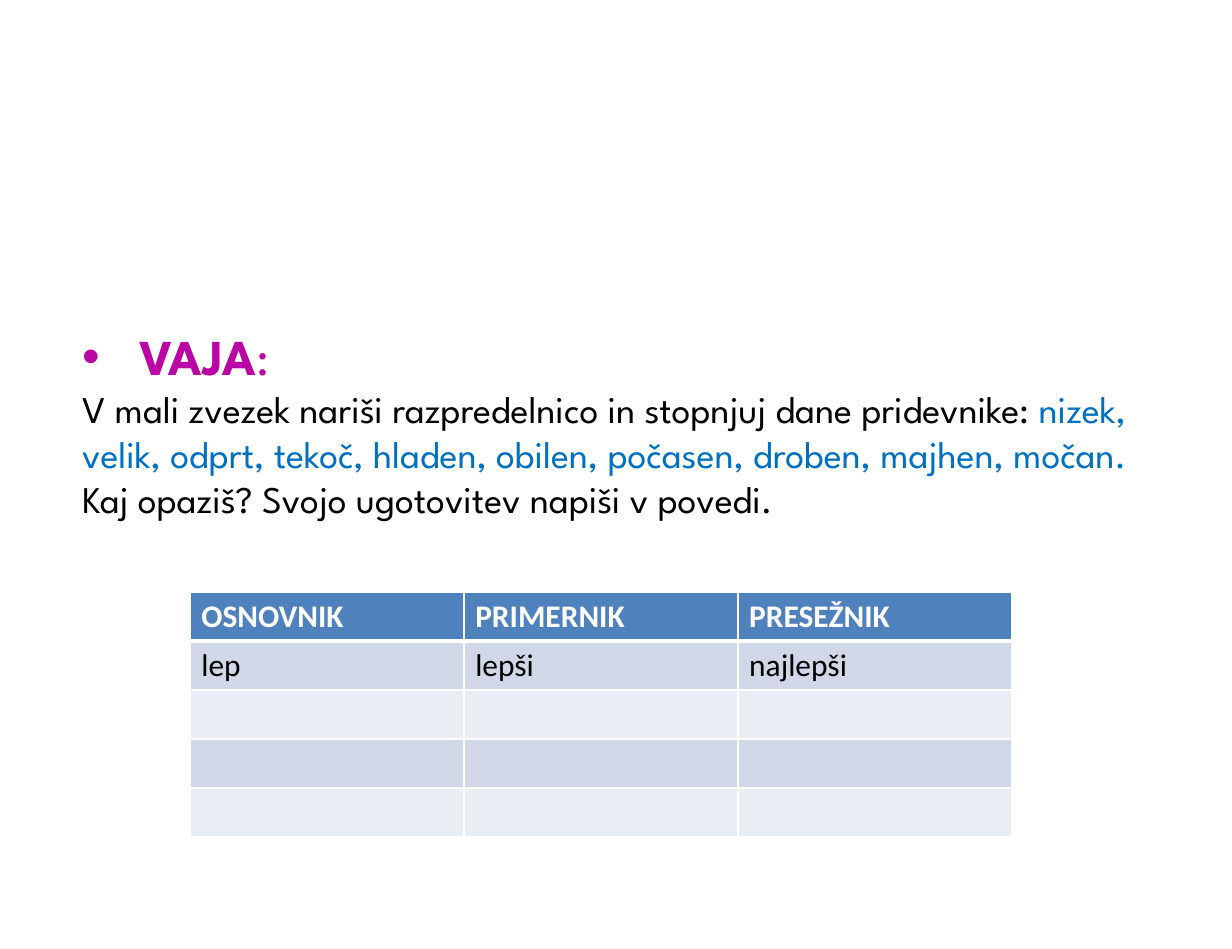
from lxml.etree import SubElement
from pptx import Presentation
from pptx.dml.color import RGBColor
from pptx.oxml.ns import qn
from pptx.util import Emu, Pt

PIXELS_PER_INCH = 113
MAGENTA = RGBColor(0xBA, 0x06, 0xA5)
BLUE = RGBColor(0x00, 0x70, 0xC0)
BLACK = RGBColor(0x00, 0x00, 0x00)
WHITE = RGBColor(0xFF, 0xFF, 0xFF)
HEADER_FILL = RGBColor(0x4F, 0x81, 0xBD)
BAND_FILLS = [RGBColor(0xE9, 0xED, 0xF4), RGBColor(0xD0, 0xD8, 0xE8)]

HEADING = {"name": "League Spartan", "size": Pt(32), "bold": True}
HEADING_COLON = {**HEADING, "bold": False}
BODY = {"name": "League Spartan", "size": Pt(24), "bold": False}
TABLE_HEADER = {"name": "Calibri", "size": Pt(20), "bold": True}
TABLE_BODY = {**TABLE_HEADER, "bold": False}

EXERCISE = [
    [("VAJA", HEADING, MAGENTA), (":", HEADING_COLON, MAGENTA)],
    [
        ("V mali zvezek nariši razpredelnico in stopnjuj dane pridevnike: ", BODY, BLACK),
        ("nizek, velik, odprt, tekoč, hladen, obilen, počasen, droben, majhen, močan.", BODY, BLUE),
    ],
    [("Kaj opaziš? Svojo ugotovitev napiši v povedi.", BODY, BLACK)],
]
DEGREES = [
    ["OSNOVNIK", "PRIMERNIK", "PRESEŽNIK"],
    ["lep", "lepši", "najlepši"],
    ["", "", ""],
    ["", "", ""],
    ["", "", ""],
]


def px(length):
    return Emu(round(length * 914400 / PIXELS_PER_INCH))


def format_font(font, values, color):
    for name, value in values.items():
        setattr(font, name, value)
    font.color.rgb = color


def add_bullet(paragraph, indent):
    properties = paragraph._p.get_or_add_pPr()
    properties.set("marL", str(px(indent)))
    properties.set("indent", str(-px(indent)))
    SubElement(properties, qn("a:buFont"), typeface="Arial")
    SubElement(properties, qn("a:buChar"), char="•")


def add_exercise(slide, left, top, width, height):
    text_frame = slide.shapes.add_textbox(px(left), px(top), px(width), px(height)).text_frame
    text_frame.word_wrap = True
    for index, runs in enumerate(EXERCISE):
        paragraph = text_frame.paragraphs[0] if index == 0 else text_frame.add_paragraph()
        if index == 0:
            add_bullet(paragraph, 57)
        for text, values, color in runs:
            run = paragraph.add_run()
            run.text = text
            format_font(run.font, values, color)


def add_borders(cell, widths):
    properties = cell._tc.get_or_add_tcPr()
    for side, width in widths.items():
        line = SubElement(properties, qn(f"a:ln{side}"), w=str(Pt(width)))
        fill = SubElement(line, qn("a:solidFill"))
        SubElement(fill, qn("a:srgbClr"), val=str(WHITE))


def fill_cell(cell, text, row):
    is_header = row == 0
    add_borders(cell, {"L": 1, "R": 1, "T": 3 if row == 1 else 1, "B": 3 if is_header else 1})
    cell.fill.solid()
    cell.fill.fore_color.rgb = HEADER_FILL if is_header else BAND_FILLS[row % 2]
    cell.text = text
    values = TABLE_HEADER if is_header else TABLE_BODY
    format_font(cell.text_frame.paragraphs[0].font, values, WHITE if is_header else BLACK)
    for run in cell.text_frame.paragraphs[0].runs:
        format_font(run.font, values, WHITE if is_header else BLACK)


def add_degree_table(slide, left, top, column_width, row_height):
    rows, columns = len(DEGREES), len(DEGREES[0])
    table = slide.shapes.add_table(
        rows, columns, px(left), px(top), px(columns * column_width), px(rows * row_height)
    ).table
    for row, texts in enumerate(DEGREES):
        for column, text in enumerate(texts):
            fill_cell(table.cell(row, column), text, row)


def main():
    presentation = Presentation()
    presentation.slide_width = px(1232)
    presentation.slide_height = px(949)
    slide = presentation.slides.add_slide(presentation.slide_layouts[6])
    add_exercise(slide, 71, 320, 1131, 207)
    add_degree_table(slide, 190, 592, 274, 49)
    presentation.save("out.pptx")


if __name__ == "__main__":
    main()
